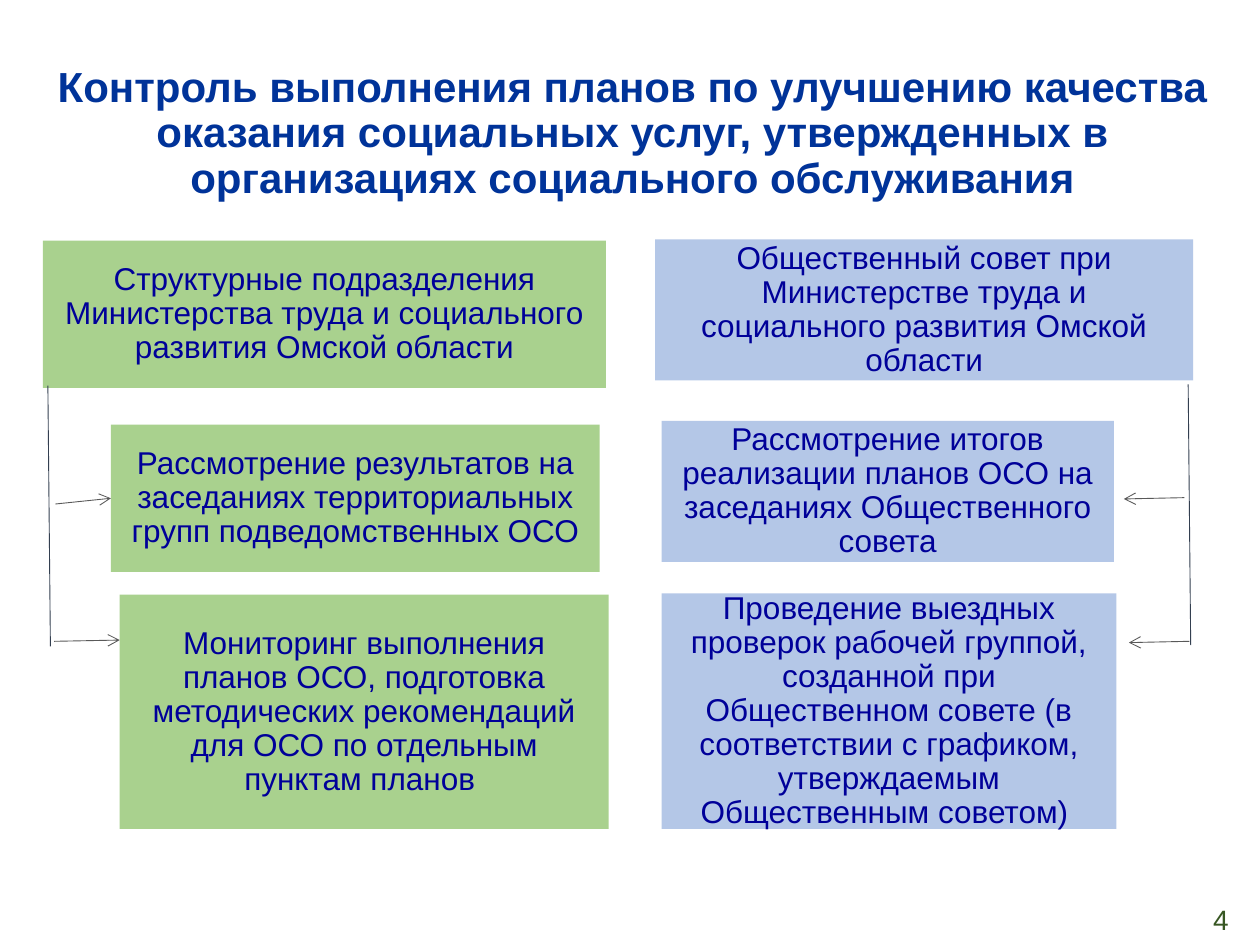
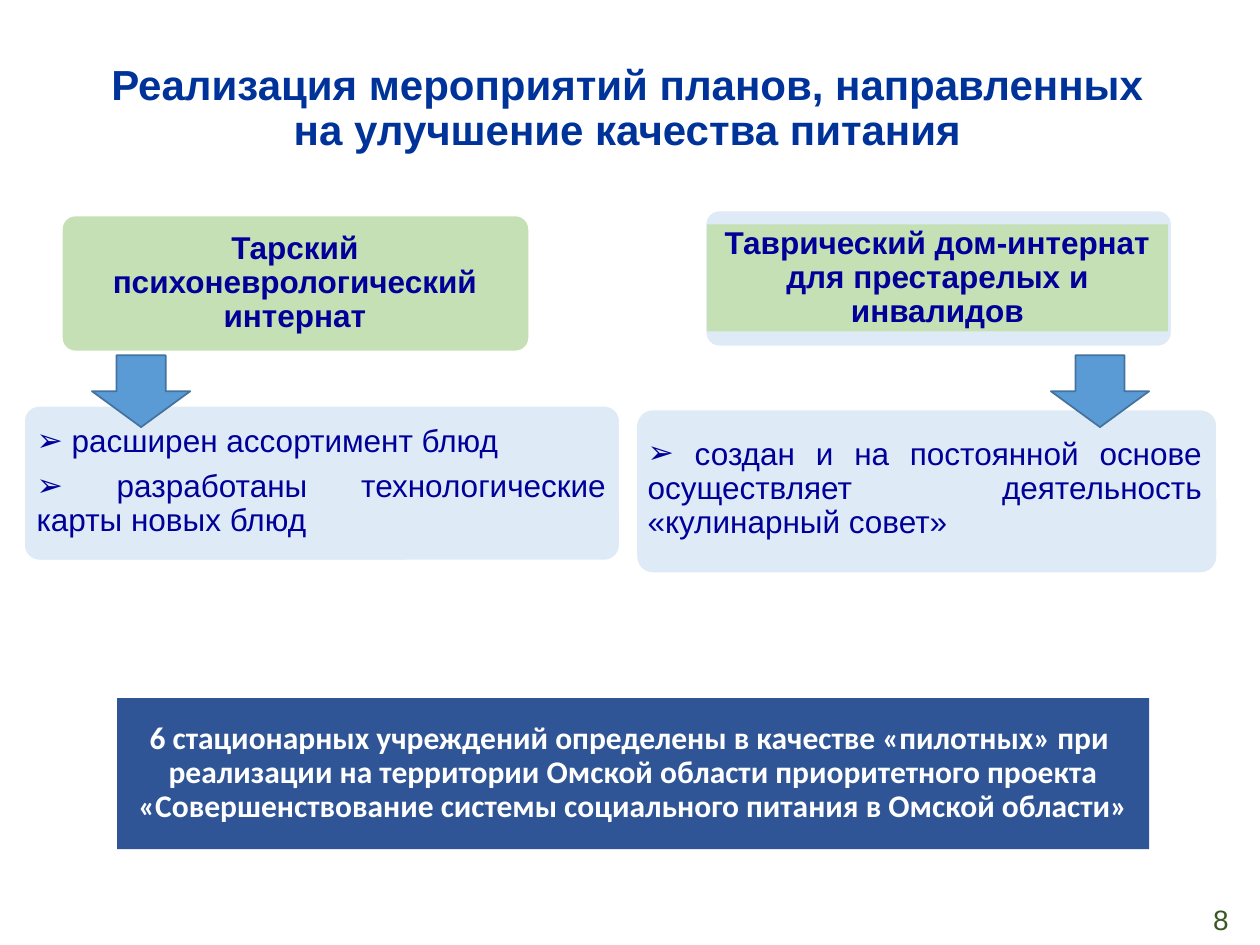
import pptx
import pptx.util
import pptx.oxml
import pptx.oxml.ns
import pptx.dml.color
import pptx.enum.shapes
import pptx.enum.text

Inches, Pt = pptx.util.Inches, pptx.util.Pt
RGB = pptx.dml.color.RGBColor
SHAPE = pptx.enum.shapes.MSO_SHAPE
ALIGN = pptx.enum.text.PP_ALIGN

TITLE = RGB(0x00, 0x33, 0x99)
INK = RGB(0x00, 0x00, 0x99)
NUMBER = RGB(0x38, 0x57, 0x23)
GREEN = RGB(0xA9, 0xD1, 0x8E)
BLUE = RGB(0xB4, 0xC7, 0xE7)
LIME = RGB(0xC5, 0xE0, 0xB4)
PALE = RGB(0xDE, 0xEB, 0xF7)
NAVY = RGB(0x2F, 0x55, 0x97)
DOWN = RGB(0x5B, 0x9B, 0xD5)
EDGE = RGB(0x43, 0x73, 0x9E)
STEM = RGB(0x33, 0x3F, 0x50)
BRANCH = RGB(0x59, 0x59, 0x59)
WHITE = RGB(0xFF, 0xFF, 0xFF)


def element(parent, tag, **attrs):
    """Append a drawing element to its parent."""
    child = pptx.oxml.parse_xml(f"<{tag} {pptx.oxml.ns.nsdecls('a')}/>")
    for key, value in attrs.items():
        child.set(key, value)
    parent.append(child)


def write(shape, texts, size=18, color=INK, bold=False, font="Arial",
          align=ALIGN.CENTER, space=0.9, bullet=None, inset=None):
    frame = shape.text_frame
    frame.word_wrap = True
    frame.vertical_anchor = pptx.enum.text.MSO_ANCHOR.MIDDLE
    if inset is not None:
        frame.margin_left = frame.margin_right = Inches(inset)
        frame.margin_top = frame.margin_bottom = Inches(inset)
    for i, text in enumerate(texts):
        para = frame.add_paragraph() if i else frame.paragraphs[0]
        para.alignment = align
        para.line_spacing = space
        if i:
            para.space_before = Pt(6.3)
        if bullet:
            props = para._p.get_or_add_pPr()
            props.set("marL", "0")
            props.set("indent", "0")
            element(props, "a:buFont", typeface="Arial")
            element(props, "a:buChar", char=bullet)
        for j, line in enumerate(text.split("\n")):
            if j:
                para.add_line_break()
            run = para.add_run()
            run.text = line
            run.font.size, run.font.bold, run.font.name = Pt(size), bold, font
            run.font.color.rgb = color


def block(slide, box, fill, texts=(), kind=SHAPE.RECTANGLE, line=None, **style):
    shape = slide.shapes.add_shape(kind, *map(Inches, box))
    shape.shadow.inherit = False
    shape.fill.solid()
    shape.fill.fore_color.rgb = fill
    if line is None:
        shape.line.fill.background()
    else:
        shape.line.color.rgb = line
        shape.line.width = Pt(1)
    if texts:
        write(shape, texts, inset=0.08, **style)
    return shape


def link(slide, start, end, color, arrow=False):
    line = slide.shapes.add_connector(
        pptx.enum.shapes.MSO_CONNECTOR.STRAIGHT, *map(Inches, start + end))
    line.line.color.rgb = color
    line.line.width = Pt(0.5)
    if arrow:
        element(line.line._get_or_add_ln(), "a:tailEnd", type="arrow")
    element(line._element.spPr, "a:effectLst")
    return line


def base(deck, box, title, number):
    """New slide with the shared title and page number."""
    slide = deck.slides.add_slide(deck.slide_layouts[6])
    head = slide.shapes.add_textbox(*map(Inches, box))
    write(head, [title], 24, TITLE, True)
    foot = slide.shapes.add_textbox(*map(Inches, (7.6, 7.1, 2.25, 0.4)))
    write(foot, [number], 16, NUMBER, align=ALIGN.RIGHT, space=1)
    return slide


def branch(slide, x, y, fill, parts, stem, arms):
    """Column of blocks with a stem and arrows; places count from x, y."""
    blocks = [block(slide, (x + dx, y + dy, w, h), fill, [text])
              for dx, dy, w, h, text in parts]
    link(slide, (x + stem, y + 1.15), (x + stem + 0.02, y + 3.22), STEM)
    for x1, y1, x2, joint in arms:
        arm = link(slide, (x + x1, y + y1), (x + x2, y + y1), BRANCH, True)
        if joint is not None:
            arm.end_connect(blocks[joint], 1)
        else:
            arm.end_y = Inches(y + y1 + (0.01 if x2 < x1 else -0.01))


def card(slide, box, inner, back, front, texts, **style):
    """Rounded card; the text panel is placed relative to its corner."""
    x, y = box[:2]
    plate = block(slide, box, back, kind=SHAPE.ROUNDED_RECTANGLE, line=WHITE)
    plate.adjustments[0] = 0.1
    dx, dy, w, h = inner
    block(slide, (x + dx, y + dy, w, h), front, texts, **style)


def control(deck):
    slide = base(deck, (0.19, 0.33, 9.66, 1.47),
                 "Контроль выполнения планов по улучшению качества оказания "
                 "социальных услуг, утвержденных в организациях социального "
                 "обслуживания", "4")
    # Ministry departments
    branch(slide, 0.34, 1.91, GREEN, [
        (0, 0, 4.47, 1.17, "Структурные подразделения Министерства труда и "
         "социального развития Омской области"),
        (0.54, 1.46, 3.88, 1.17, "Рассмотрение результатов на заседаниях "
         "территориальных групп подведомственных ОСО"),
        (0.61, 2.81, 3.88, 1.86, "Мониторинг выполнения планов ОСО, подготовка "
         "методических рекомендаций для ОСО по отдельным пунктам планов "),
    ], 0.04, [(0.1, 2.09, 0.54, 1), (0.09, 3.18, 0.61, None)])
    # Public council
    branch(slide, 5.2, 1.9, BLUE, [
        (0, 0, 4.27, 1.12, "Общественный совет при Министерстве труда и "
         "социального развития Омской области"),
        (0.05, 1.44, 3.59, 1.12, "Рассмотрение итогов реализации планов ОСО на "
         "заседаниях Общественного совета"),
        (0.05, 2.81, 3.61, 1.87, "Проведение выездных проверок рабочей группой, "
         "созданной при Общественном совете (в соответствии с графиком, "
         "утверждаемым Общественным советом) "),
    ], 4.23, [(4.2, 2.05, 3.72, None), (4.24, 3.19, 3.76, None)])


def food(deck):
    slide = base(deck, (0.43, 0.36, 9.19, 1.02),
                 "Реализация мероприятий планов, направленных \n"
                 "на улучшение качества питания ", "8")
    # Institutions
    card(slide, (0.49, 1.71, 3.71, 1.08), (0.01, 0.11, 3.68, 0.85), LIME, LIME,
         ["Тарский психоневрологический интернат"], bold=True)
    card(slide, (5.6, 1.67, 3.7, 1.08), (0.01, 0.11, 3.66, 0.85), PALE, LIME,
         ["Таврический дом-интернат для престарелых и инвалидов"], bold=True)
    # Results
    points = dict(align=ALIGN.JUSTIFY, bullet="➢")
    card(slide, (0.19, 3.22, 4.73, 1.23), (0.02, 0.12, 4.68, 0.97), PALE, PALE,
         [" расширен ассортимент блюд",
          " разработаны технологические карты новых блюд"], **points)
    card(slide, (5.05, 3.25, 4.61, 1.3), (0.01, 0.12, 4.56, 1.02), PALE, PALE,
         [" создан и на постоянной основе осуществляет деятельность "
          "«кулинарный совет»"], **points)
    for x in (0.73, 8.34):
        block(slide, (x, 2.82, 0.78, 0.57), DOWN, kind=SHAPE.DOWN_ARROW, line=EDGE)
    # Pilot project
    block(slide, (0.93, 5.54, 8.19, 1.2), NAVY,
          ["6 стационарных учреждений определены в качестве «пилотных» при \n"
           "реализации на территории Омской области приоритетного проекта "
           "«Совершенствование системы социального питания в Омской области»"],
          color=WHITE, bold=True, font="Calibri")


def main():
    deck = pptx.Presentation()
    deck.slide_width, deck.slide_height = Inches(10), Inches(7.5)
    control(deck)
    food(deck)
    deck.save("out.pptx")


if __name__ == "__main__":
    main()
